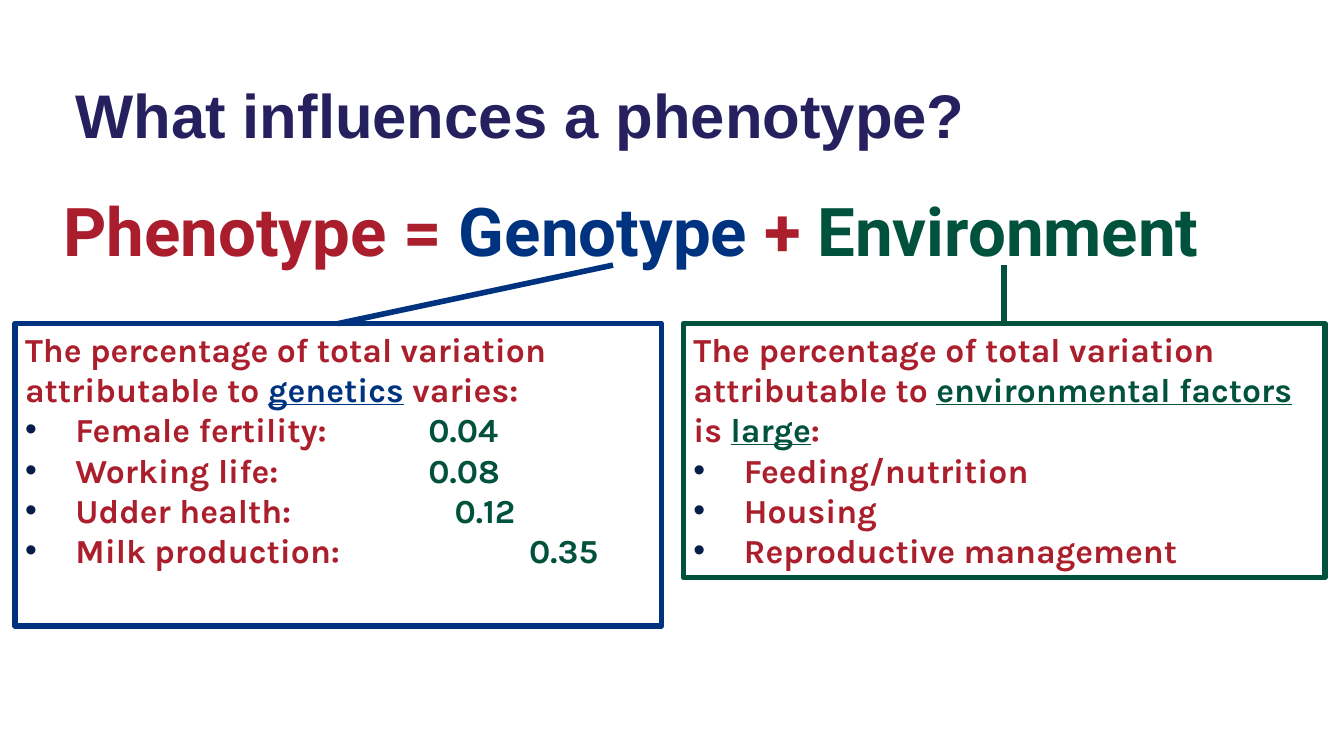
from dataclasses import dataclass

from lxml import etree
from pptx import Presentation
from pptx.dml.color import RGBColor
from pptx.enum.shapes import MSO_CONNECTOR as Connector, MSO_SHAPE as Shape
from pptx.enum.text import MSO_ANCHOR as Anchor, PP_ALIGN as Align
from pptx.oxml.ns import qn
from pptx.util import Inches, Pt


@dataclass(frozen=True)
class Theme:
    title: str = "26205E"
    phenotype: str = "A91D2C"
    body: str = "AB1E2C"
    genetics: str = "00337F"
    environment: str = "00523C"
    bullet: str = "071D49"
    title_font: str = "Arial"
    formula_font: str = "Roboto"
    body_font: str = "Karla"
    title_size: int = 44
    formula_size: int = 48
    body_size: int = 24
    line_width: int = 4
    bullet_indent: float = 0.5


THEME = Theme()


def add_run(paragraph, text, color, font, size, underline=False):
    run = paragraph.add_run()
    run.text = text
    run.font.name = font
    run.font.size = Pt(size)
    run.font.bold = True
    run.font.underline = underline
    run.font.color.rgb = RGBColor.from_string(color)


def add_body_run(paragraph, text, color=THEME.body, underline=False):
    add_run(paragraph, text, color, THEME.body_font, THEME.body_size, underline)


def add_text_area(slide, box, anchor):
    shape = slide.shapes.add_textbox(*map(Inches, box))
    frame = shape.text_frame
    frame.word_wrap = True
    frame.vertical_anchor = anchor
    paragraph = frame.paragraphs[0]
    paragraph.alignment = Align.LEFT
    return paragraph


def add_title(slide, box):
    paragraph = add_text_area(slide, box, Anchor.MIDDLE)
    paragraph.line_spacing = 0.9
    add_run(paragraph, "What influences a phenotype?", THEME.title, THEME.title_font, THEME.title_size)


def add_formula(slide, box):
    paragraph = add_text_area(slide, box, Anchor.TOP)
    for text, color in (
        ("Phenotype ", THEME.phenotype),
        ("= ", THEME.body),
        ("Genotype", THEME.genetics),
        (" + ", THEME.body),
        ("Environment", THEME.environment),
    ):
        add_run(paragraph, text, color, THEME.formula_font, THEME.formula_size)


def add_bullet(frame, label, value="", value_position=1):
    paragraph = frame.add_paragraph()
    paragraph.alignment = Align.LEFT
    properties = paragraph._p.get_or_add_pPr()
    indent = Inches(THEME.bullet_indent)
    properties.set("marL", str(indent))
    properties.set("indent", str(-indent))
    properties.set("defTabSz", str(Inches(value_position)))
    color = etree.SubElement(properties, qn("a:buClr"))
    etree.SubElement(color, qn("a:srgbClr"), val=THEME.bullet)
    etree.SubElement(properties, qn("a:buFont"), typeface="Arial")
    etree.SubElement(properties, qn("a:buChar"), char="•")
    add_body_run(paragraph, label)
    if value:
        add_body_run(paragraph, "\t", THEME.body)
        add_body_run(paragraph, value, THEME.environment)


def add_factor_box(slide, box, color, intro, bullets):
    shape = slide.shapes.add_shape(Shape.RECTANGLE, *map(Inches, box))
    shape.shadow.inherit = False
    shape.fill.background()
    shape.line.color.rgb = RGBColor.from_string(color)
    shape.line.width = Pt(THEME.line_width)
    frame = shape.text_frame
    frame.word_wrap = True
    frame.vertical_anchor = Anchor.TOP
    paragraph = frame.paragraphs[0]
    paragraph.alignment = Align.LEFT
    for text, highlighted in intro:
        add_body_run(paragraph, text, color if highlighted else THEME.body, highlighted)
    for bullet in bullets:
        add_bullet(frame, *bullet)
    return shape


def add_link(slide, start, factor_box, color):
    left, top = map(Inches, start)
    connector = slide.shapes.add_connector(Connector.STRAIGHT, left, top, left, factor_box.top)
    connector.end_connect(factor_box, 0)
    connector.line.color.rgb = RGBColor.from_string(color)
    connector.line.width = Pt(THEME.line_width)
    etree.SubElement(connector._element.spPr, qn("a:effectLst"))


def build_phenotype_slide(presentation):
    slide = presentation.slides.add_slide(presentation.slide_layouts[6])
    add_formula(slide, (0.53, 1.83, 12.27, 0.94))
    genetics_box = add_factor_box(
        slide,
        (0.15, 3.21, 6.41, 3),
        THEME.genetics,
        (
            ("The percentage of total variation attributable to ", False),
            ("genetics", True),
            (" varies:", False),
        ),
        (
            ("Female fertility:", "0.04", 4),
            ("Working life:", "0.08", 4),
            ("Udder health:", "0.12", 4.26),
            ("Milk production:", "0.35", 5),
        ),
    )
    environment_box = add_factor_box(
        slide,
        (6.78, 3.21, 6.36, 2.52),
        THEME.environment,
        (
            ("The percentage of total variation attributable to ", False),
            ("environmental factors", True),
            (" is ", False),
            ("large", True),
            (":", False),
        ),
        (("Feeding/nutrition",), ("Housing",), ("Reproductive management",)),
    )
    add_link(slide, (6.08, 2.63), genetics_box, THEME.genetics)
    add_link(slide, (9.96, 2.63), environment_box, THEME.environment)
    add_title(slide, (0.65, 0.32, 12, 1.71))


def main():
    presentation = Presentation()
    presentation.slide_width = Inches(13.33)
    presentation.slide_height = Inches(7.5)
    build_phenotype_slide(presentation)
    presentation.save("out.pptx")


if __name__ == "__main__":
    main()
